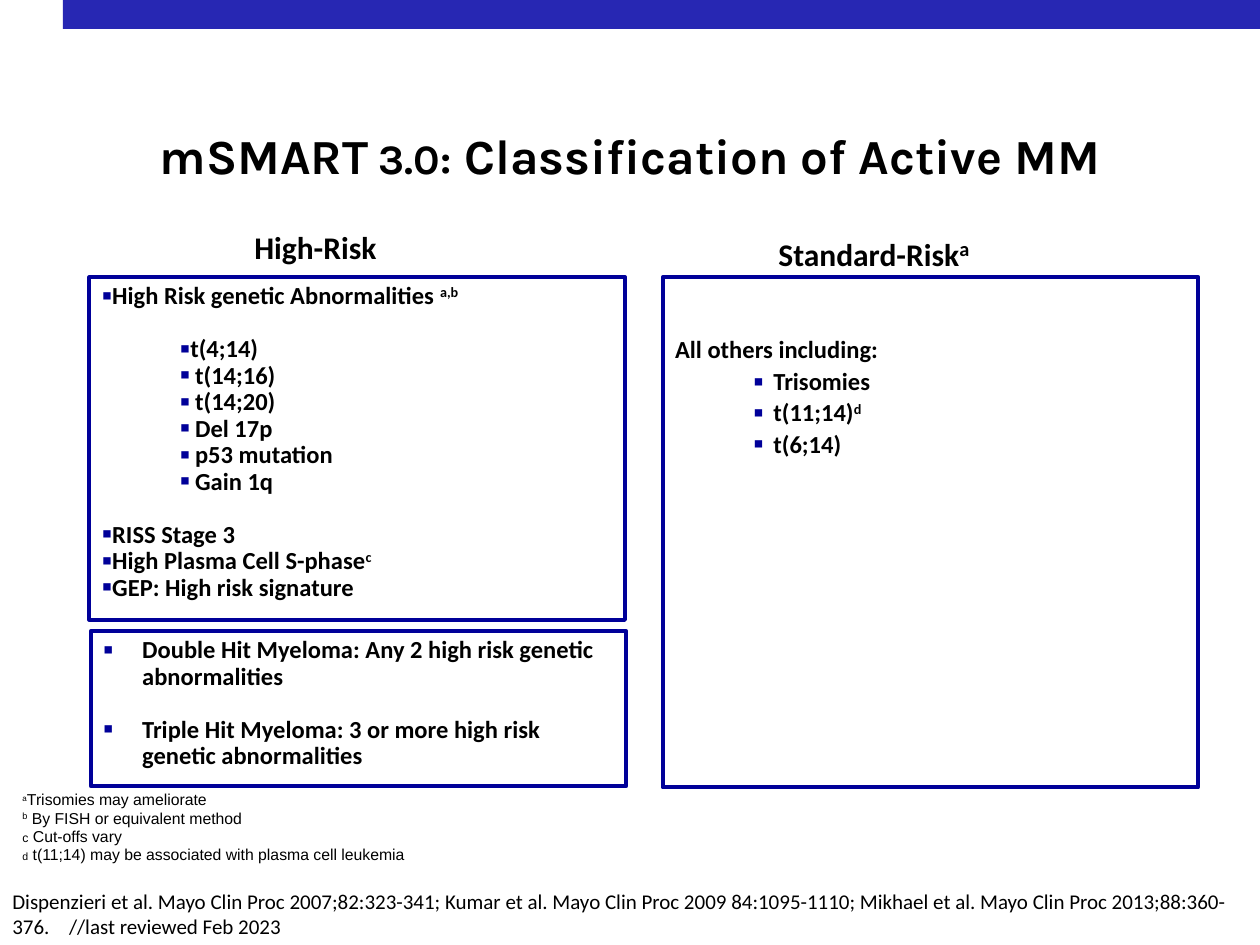
from lxml.etree import SubElement
from pptx import Presentation
from pptx.dml.color import RGBColor
from pptx.enum.shapes import MSO_SHAPE as Shape
from pptx.enum.text import MSO_ANCHOR as Anchor, PP_ALIGN as Align
from pptx.oxml.ns import qn
from pptx.util import Inches, Pt

COLUMNS, ROWS = 100, 75
NAVY, BLUE, BLACK = "000099", "2727B3", "000000"
SUPER = {"super": True}


def color(hex_value):
    return RGBColor.from_string(hex_value)


def line(*spans, **layout):
    """A paragraph: spans are strings or (string, format) pairs."""
    return [span if isinstance(span, tuple) else (span, {}) for span in spans], layout


def bullet(*spans, margin=0.0, hang=0.08, **layout):
    """A bulleted paragraph; margin and hang are inches to the bullet and on to the text."""
    return line(*spans, bullet=True, margin=margin, hang=hang, **layout)


class SlideBuilder:
    def __init__(self, deck):
        self.slide = deck.slides.add_slide(deck.slide_layouts[6])
        self.column = deck.slide_width / COLUMNS
        self.row = deck.slide_height / ROWS

    def place(self, left, top, width, height):
        return [round(value) for value in (left * self.column, top * self.row,
                                           width * self.column, height * self.row)]

    def bar(self, *area, fill):
        shape = self.slide.shapes.add_shape(Shape.RECTANGLE, *self.place(*area))
        shape.shadow.inherit = False
        shape.fill.solid()
        shape.fill.fore_color.rgb = color(fill)
        shape.line.fill.background()

    def panel(self, *area, lines, top_inset=0.05):
        shape = self.slide.shapes.add_shape(Shape.RECTANGLE, *self.place(*area))
        shape.shadow.inherit = False
        shape.fill.background()
        shape.line.color.rgb = color(NAVY)
        shape.line.width = Pt(2.25)
        shape.text_frame.margin_top = Inches(top_inset)
        self.add_lines(shape.text_frame, lines, {"size": 14, "bold": True}, spacing=0.9)

    def text(self, *area, lines, wrap=True, align=Align.LEFT, spacing=1.0, **font):
        box = self.slide.shapes.add_textbox(*self.place(*area))
        self.add_lines(box.text_frame, lines, font, wrap, align, spacing)

    def add_lines(self, frame, lines, font, wrap=True, align=Align.LEFT, spacing=1.0):
        frame.word_wrap = wrap
        frame.vertical_anchor = Anchor.TOP
        for index, (spans, layout) in enumerate(lines):
            para = frame.paragraphs[0] if index == 0 else frame.add_paragraph()
            para.alignment = align
            para.line_spacing = spacing
            para.space_before = Pt(layout.get("before", 0))
            if layout.get("bullet"):
                self.add_bullet(para, layout["margin"], layout["hang"])
            if "tab" in layout:
                tabs = SubElement(para._p.get_or_add_pPr(), qn("a:tabLst"))
                SubElement(tabs, qn("a:tab"), pos=str(Inches(layout["tab"])), algn="l")
            for words, changes in spans:
                self.add_span(para, words, {"name": "Calibri", "size": 12, **font, **changes})

    def add_bullet(self, para, margin, hang):
        props = para._p.get_or_add_pPr()
        props.set("marL", str(Inches(margin + hang)))
        props.set("indent", str(-Inches(hang)))
        SubElement(SubElement(props, qn("a:buClr")), qn("a:srgbClr"), val=NAVY)
        SubElement(props, qn("a:buSzPct"), val="120000")
        SubElement(props, qn("a:buFont"), typeface="Arial")
        SubElement(props, qn("a:buChar"), char="▪")

    def add_span(self, para, words, style):
        span = para.add_run()
        span.text = words
        span.font.color.rgb = color(BLACK)
        for name, value in style.items():
            if name == "super":
                span._r.get_or_add_rPr().set("baseline", "30000")
            else:
                setattr(span.font, name, Pt(value) if name == "size" else value)


def main():
    deck = Presentation()
    deck.slide_width, deck.slide_height = Inches(10), Inches(7.5)
    page = SlideBuilder(deck)

    page.bar(5, 0, 95, 2.3, fill=BLUE)
    page.text(0, 10, 100, 12.6, align=Align.CENTER, spacing=0.9, name="Karla", size=28, bold=True,
              lines=[line("mSMART", (" 3.0:", {"size": 24}), " Classification of Active MM")])

    heading = {"wrap": False, "size": 18, "bold": True}
    page.text(19.2, 17.6, 11.8, 4, lines=[line("High-Risk")], **heading)
    page.text(60.8, 17.9, 17.4, 4, **heading,
              lines=[line("Standard-Risk", ("a", {"size": 20, **SUPER}))])

    blank_line = 15.2
    abnormalities = ["t(14;16)", "t(14;20)", "Del 17p", "p53 mutation", "Gain 1q"]
    page.panel(7.1, 22, 42.5, 27.2, lines=[
        bullet("High Risk genetic Abnormalities ", ("a,b", SUPER)),
        bullet("t(4;14)", margin=0.62, before=blank_line),
        *[bullet(name, margin=0.62, hang=0.12) for name in abnormalities],
        bullet("RISS Stage 3", before=blank_line),
        bullet("High Plasma Cell S-phase", ("c", SUPER)),
        bullet("GEP: High risk signature"),
    ])

    others = [["Trisomies"], ["t(11;14)", ("d", SUPER)], ["t(6;14)"]]
    page.panel(52.6, 22, 42.5, 40.5, top_inset=0.48, lines=[
        line("All others including:"),
        *[bullet(*spans, margin=0.62, hang=0.16, before=2.8) for spans in others],
    ])

    page.panel(7.2, 50.1, 42.5, 12.3, lines=[
        bullet("Double Hit Myeloma: Any 2 high risk genetic abnormalities", hang=0.31),
        bullet("Triple Hit Myeloma: 3 or more high risk genetic abnormalities", hang=0.31,
               before=blank_line),
    ])

    footnotes = [
        ("a", {"size": 8, **SUPER}, "Trisomies may ameliorate"),
        ("b", SUPER, " By FISH or equivalent method"),
        ("c", {"size": 7}, " Cut-offs vary"),
        ("d", {"size": 6}, " t(11;14) may be associated with plasma cell leukemia"),
    ]
    page.text(0.8, 62.5, 92.4, 6.8, spacing=0.8, name="Arial", size=9, lines=[
        line((mark, style), note, before=1.8 if index else 0)
        for index, (mark, style, note) in enumerate(footnotes)])

    page.text(0, 70, 100, 5.1, lines=[line(
        "Dispenzieri et al. Mayo Clin Proc 2007;82:323-341; Kumar et al. Mayo Clin Proc 2009 "
        "84:1095-1110; Mikhael et al. Mayo Clin Proc 2013;88:360-376.\t//last reviewed Feb 2023",
        tab=0.45)])

    deck.save("out.pptx")


if __name__ == "__main__":
    main()
